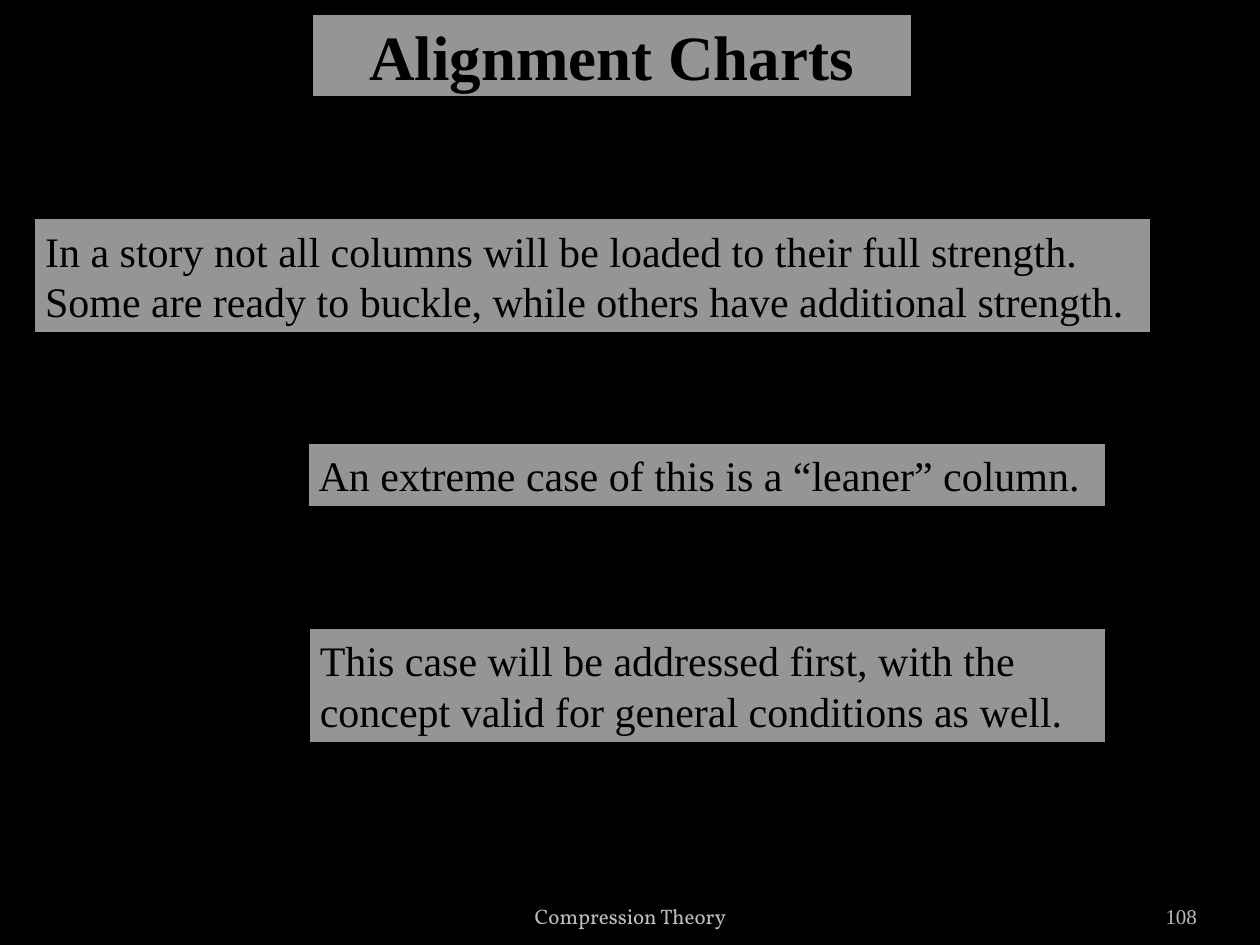
from lxml.etree import SubElement
from pptx import Presentation
from pptx.dml.color import RGBColor
from pptx.enum.shapes import MSO_SHAPE
from pptx.enum.text import MSO_ANCHOR, PP_ALIGN
from pptx.oxml.ns import qn
from pptx.util import Pt

COLORS = {
    "background": "000000",
    "panel": "F2F2F2",
    "ink": "000000",
    "number": "BCBCBC",
    "footer": "BDBDBD",
}
SERIF = "Times New Roman"
PANEL_ALPHA = 62


def rgb(name):
    """Return the named colour."""
    return RGBColor.from_string(COLORS[name])


def write(frame, lines, size, color, font=SERIF, align=PP_ALIGN.LEFT, bold=False):
    """Fill a text frame with one paragraph per line."""
    frame.word_wrap = True
    frame.text = "\n".join(lines)
    for paragraph in frame.paragraphs:
        paragraph.alignment = align
        paragraph.font.name = font
        paragraph.font.size = Pt(size)
        paragraph.font.bold = bold
        paragraph.font.color.rgb = rgb(color)


def add_panel(slide, left, top, width, height, lines, size=24, **style):
    """Add a translucent outlined panel with text."""
    panel = slide.shapes.add_shape(
        MSO_SHAPE.RECTANGLE, Pt(left), Pt(top), Pt(width), Pt(height))
    panel.shadow.inherit = False
    panel.fill.solid()
    panel.fill.fore_color.rgb = rgb("panel")
    fill_color = panel.fill._xPr.find(qn("a:solidFill"))[0]
    SubElement(fill_color, qn("a:alpha"), val=str(PANEL_ALPHA * 1000))
    panel.line.color.rgb = rgb("ink")
    panel.line.width = Pt(3)
    panel.text_frame.vertical_anchor = MSO_ANCHOR.MIDDLE
    write(panel.text_frame, lines, size, "ink", **style)


def add_footer(slide, left, width, text, color, side_inset=7.2, **style):
    """Add a small text at the foot of the slide."""
    footer = slide.shapes.add_textbox(Pt(left), Pt(505.4), Pt(width), Pt(28.8))
    frame = footer.text_frame
    frame.margin_left = frame.margin_right = Pt(side_inset)
    frame.vertical_anchor = MSO_ANCHOR.BOTTOM
    write(frame, [text], 12, color, **style)


def main():
    """Build the slide and save it."""
    deck = Presentation()
    deck.slide_width, deck.slide_height = Pt(720), Pt(540)
    slide = deck.slides.add_slide(deck.slide_layouts[6])
    slide.background.fill.solid()
    slide.background.fill.fore_color.rgb = rgb("background")

    add_panel(slide, 175.7, 357.8, 457.2, 67.7, [
        "This case will be addressed first, with the concept valid for "
        "general conditions as well."])
    add_panel(slide, 18.7, 123.8, 640.1, 67.7, [
        "In a story not all columns will be loaded to their full strength.",
        "Some are ready to buckle, while others have additional strength."])
    add_panel(slide, 175, 252, 457.9, 38.9, [
        "An extreme case of this is a “leaner” column."])
    add_footer(slide, 624.2, 59.8, "108", "number", side_inset=0,
               align=PP_ALIGN.RIGHT)
    add_footer(slide, 246.2, 228.2, "Compression Theory", "footer",
               font="Vollkorn", align=PP_ALIGN.CENTER)
    add_panel(slide, 177.1, 7.2, 344.9, 49, ["Alignment Charts"], size=36,
              align=PP_ALIGN.CENTER, bold=True)
    deck.save("out.pptx")


if __name__ == "__main__":
    main()
